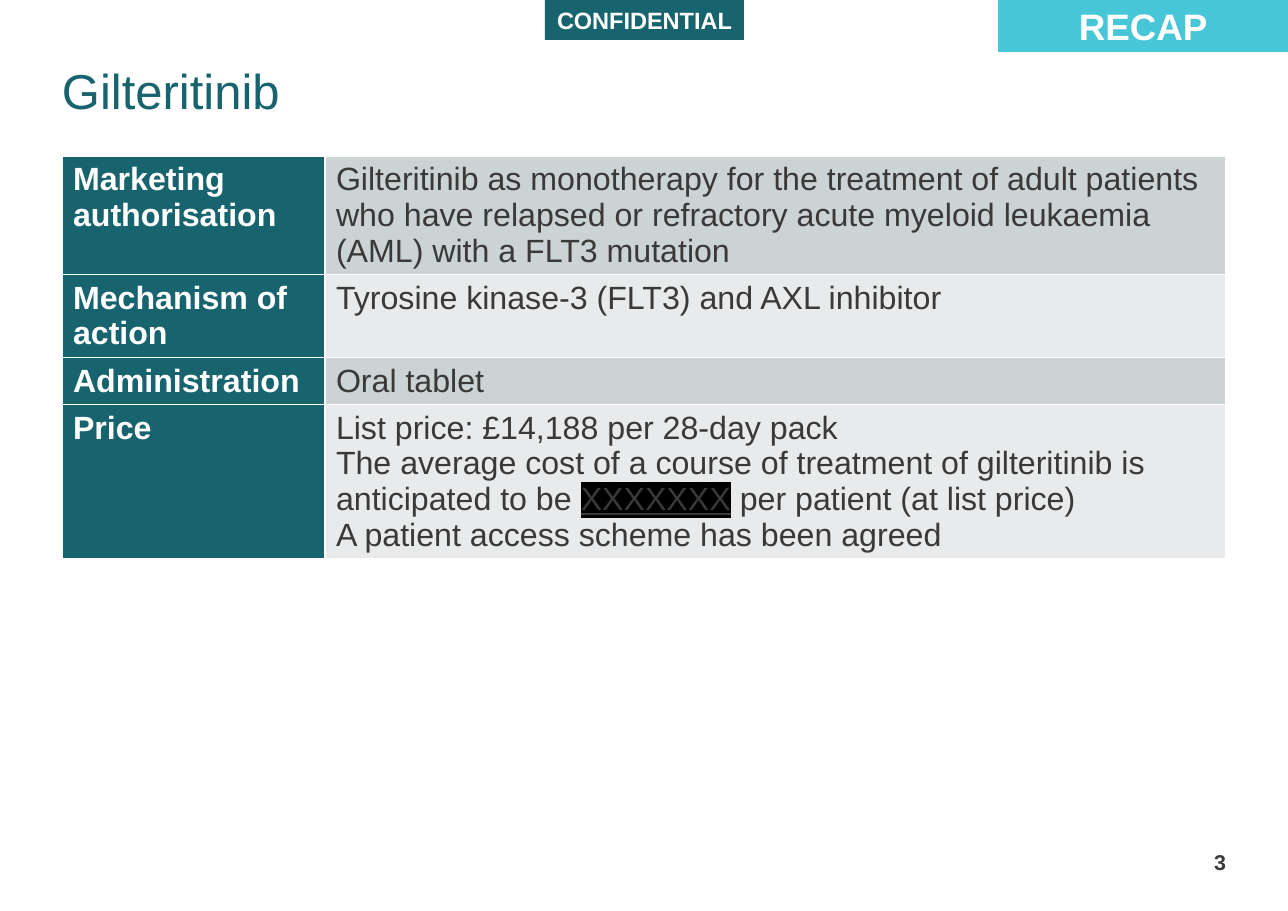
from lxml import etree
from pptx import Presentation
from pptx import util as u
from pptx.dml.color import RGBColor
from pptx.enum import shapes, text
from pptx.oxml.ns import qn

EMU_PER_PX = 8298
TEAL = RGBColor(0x18, 0x64, 0x6E)
CYAN = RGBColor(0x46, 0xC6, 0xD7)
WHITE = RGBColor(0xFF, 0xFF, 0xFF)
BLACK = RGBColor(0x00, 0x00, 0x00)
INK = RGBColor(0x39, 0x39, 0x38)
BANDS = (RGBColor(0xCC, 0xD3, 0xD5), RGBColor(0xE8, 0xEA, 0xEB))

REDACTED = "XXXXXXX"
COLUMN_WIDTHS = (263, 901)
# Row heading, row height, paragraphs
ROWS = (
    ("Marketing authorisation", 118,
     ["Gilteritinib as monotherapy for the treatment of adult patients who have "
      "relapsed or refractory acute myeloid leukaemia (AML) with a FLT3 mutation"]),
    ("Mechanism of action", 83, ["Tyrosine kinase-3 (FLT3) and AXL inhibitor"]),
    ("Administration", 47, ["Oral tablet"]),
    ("Price", 153,
     ["List price: £14,188 per 28-day pack",
      "The average cost of a course of treatment of gilteritinib is anticipated "
      f"to be {REDACTED} per patient (at list price)",
      "A patient access scheme has been agreed"]),
)


def px(n):
    return u.Emu(n * EMU_PER_PX)


class SlideBuilder:
    def __init__(self, prs, font="Arial"):
        self.font = font
        self.slide = prs.slides.add_slide(prs.slide_layouts[5])

    def style(self, p, size, color, bold=False, align=text.PP_ALIGN.LEFT):
        p.alignment = align
        p.font.name = self.font
        p.font.size = u.Pt(size)
        p.font.bold = bold
        p.font.color.rgb = color

    def frame(self, tf, anchor):
        """Remove the margins and fix the size of a text frame."""
        tf.margin_left = tf.margin_top = tf.margin_right = tf.margin_bottom = 0
        tf.vertical_anchor = anchor
        tf.auto_size = text.MSO_AUTO_SIZE.NONE
        tf.word_wrap = True

    def title(self, words, x, y, w, h):
        sp = self.slide.shapes.title
        sp.left, sp.top, sp.width, sp.height = map(px, (x, y, w, h))
        self.frame(sp.text_frame, text.MSO_ANCHOR.TOP)
        p = sp.text_frame.paragraphs[0]
        p.text = words
        p.line_spacing = u.Pt(42)
        self.style(p, 32, TEAL)

    def label(self, words, x, y, w, h, size, fill):
        sp = self.slide.shapes.add_shape(
            shapes.MSO_SHAPE.RECTANGLE, *map(px, (x, y, w, h)))
        sp.shadow.inherit = False
        sp.fill.solid()
        sp.fill.fore_color.rgb = fill
        sp.line.fill.background()
        tf = sp.text_frame
        tf.word_wrap = False
        tf.vertical_anchor = text.MSO_ANCHOR.MIDDLE
        p = tf.paragraphs[0]
        p.text = words
        self.style(p, size, WHITE, True, text.PP_ALIGN.CENTER)

    def page_number(self, number, x, y, w, h):
        sp = self.slide.shapes.add_textbox(*map(px, (x, y, w, h)))
        self.frame(sp.text_frame, text.MSO_ANCHOR.BOTTOM)
        p = sp.text_frame.paragraphs[0]
        p.text = number
        self.style(p, 14, INK, True, text.PP_ALIGN.RIGHT)

    def redact(self, r):
        r.font.underline = True
        highlight = etree.SubElement(r.font._element, qn("a:highlight"))
        etree.SubElement(highlight, qn("a:srgbClr"), val=str(BLACK))

    def cell(self, cell, paragraphs, fill, color, bold):
        tc_pr = cell._tc.get_or_add_tcPr()
        for side in "LRTB":
            ln = etree.SubElement(tc_pr, qn(f"a:ln{side}"), w=str(u.Pt(1)))
            line_fill = etree.SubElement(ln, qn("a:solidFill"))
            etree.SubElement(line_fill, qn("a:srgbClr"), val=str(WHITE))
        cell.fill.solid()
        cell.fill.fore_color.rgb = fill
        tf = cell.text_frame
        for i, words in enumerate(paragraphs):
            p = tf.add_paragraph() if i else tf.paragraphs[0]
            self.style(p, 21, color, bold)
            before, hidden, after = words.partition(REDACTED)
            p.add_run().text = before
            if hidden:
                r = p.add_run()
                r.text = hidden
                self.redact(r)
                p.add_run().text = after

    def table(self, x, y):
        w, h = sum(COLUMN_WIDTHS), sum(row[1] for row in ROWS)
        table = self.slide.shapes.add_table(
            len(ROWS), len(COLUMN_WIDTHS), *map(px, (x, y, w, h))).table
        table.first_row = table.horz_banding = False
        for column, width in zip(table.columns, COLUMN_WIDTHS):
            column.width = px(width)
        for i, (heading, height, paragraphs) in enumerate(ROWS):
            table.rows[i].height = px(height)
            self.cell(table.cell(i, 0), [heading], TEAL, WHITE, True)
            self.cell(table.cell(i, 1), paragraphs, BANDS[i % 2], INK, False)


def main():
    prs = Presentation()
    prs.slide_width, prs.slide_height = px(1288), px(911)
    s = SlideBuilder(prs)
    s.label("CONFIDENTIAL", 545, 0, 199, 40, 15.4, TEAL)
    s.title("Gilteritinib", 62, 55, 1164, 93)
    s.page_number("3", 1166, 835, 60, 40)
    s.table(62, 156)
    s.label("RECAP", 998, 0, 290, 52, 24, CYAN)
    prs.save("out.pptx")


if __name__ == "__main__":
    main()
